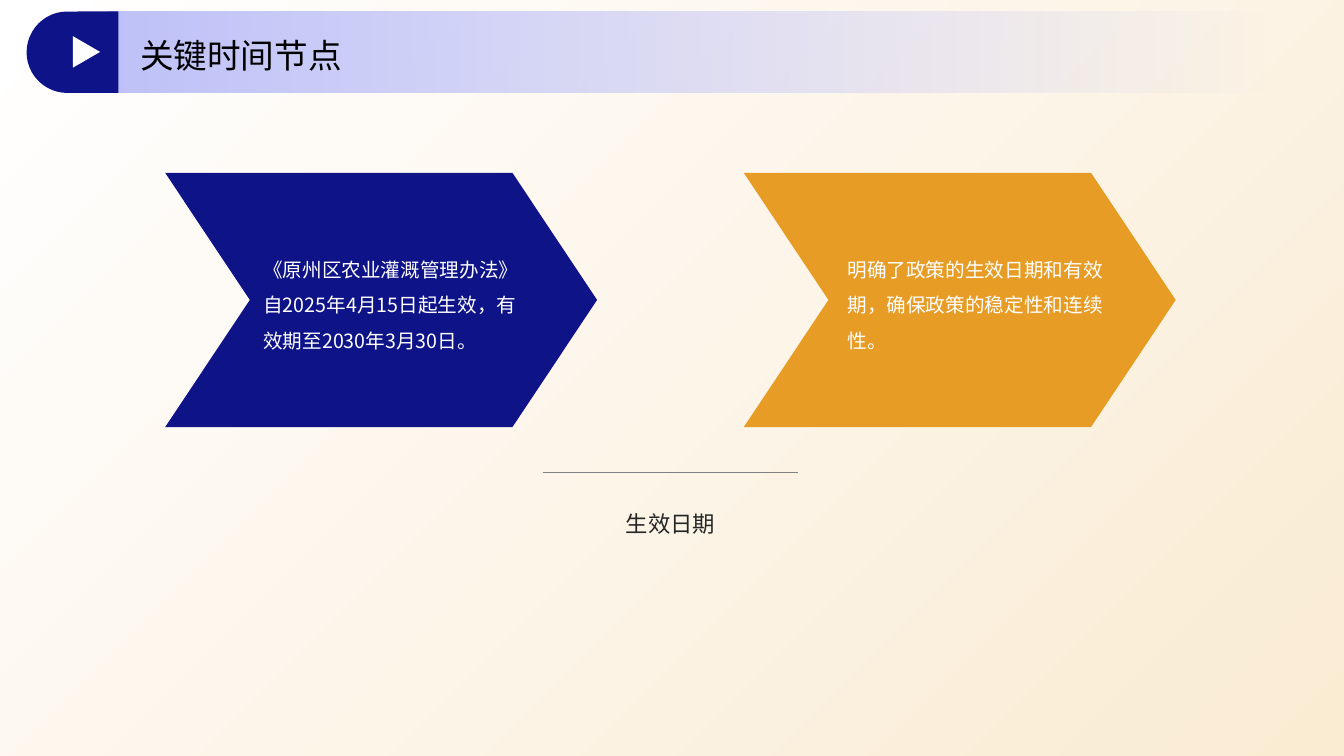
from lxml import etree
from pptx import Presentation
from pptx import util as u
from pptx.dml.color import RGBColor
from pptx.enum import shapes, text
from pptx.oxml import ns

FONT = "Noto Sans CJK SC"
NAVY = RGBColor(0x0E, 0x14, 0x88)
AMBER = RGBColor(0xE7, 0x9C, 0x25)
LILAC = RGBColor(0xBE, 0xC1, 0xF8)
CREAM = RGBColor(0xFA, 0xEB, 0xD3)
WHITE = RGBColor(0xFF, 0xFF, 0xFF)
GREY = RGBColor(0x80, 0x80, 0x80)
CHARCOAL = RGBColor(0x26, 0x26, 0x26)
BLACK = RGBColor(0, 0, 0)
SHAPE = shapes.MSO_SHAPE
MIDDLE = text.MSO_ANCHOR.MIDDLE
LEFT, CENTER = text.PP_ALIGN.LEFT, text.PP_ALIGN.CENTER


def add_block(page, kind, box, color=None, rotation=0):
    """Add a borderless preset shape, filled when a colour is given."""
    block = page.shapes.add_shape(kind, *map(u.Pt, box))
    block.shadow.inherit = False
    block.line.fill.background()
    block.rotation = rotation
    if color is not None:
        block.fill.solid()
        block.fill.fore_color.rgb = color
    return block


def add_gradient(block, start, end, angle):
    """Fill a shape with a two-colour gradient, angle counter-clockwise."""
    block.fill.gradient()
    block.fill.gradient_angle = angle
    for stop, color in zip(block.fill.gradient_stops, (start, end)):
        stop.color.rgb = color


def add_text(page, box, words, size, color, spacing, anchor=MIDDLE, align=LEFT):
    """Add a wrapping text box without insets."""
    frame = page.shapes.add_textbox(*map(u.Pt, box)).text_frame
    frame.word_wrap = True
    frame.vertical_anchor = anchor
    frame.margin_left = frame.margin_right = frame.margin_top = frame.margin_bottom = 0
    frame.text = words
    para = frame.paragraphs[0]
    para.line_spacing = spacing
    para.alignment = align
    span = para.runs[0]
    span.font.size = u.Pt(size)
    span.font.name = FONT
    span.font.color.rgb = color
    etree.SubElement(span.font._element, ns.qn("a:ea"), typeface=FONT)


def add_background(page, width, height):
    """Cover the page with a diagonal white-to-cream gradient."""
    block = add_block(page, SHAPE.RECTANGLE, (0, 0, width, height))
    add_gradient(block, WHITE, CREAM, 315)


def add_title_bar(page, box, title):
    """Draw the fading title band with its round cap and play mark."""
    left, top, width, height = box
    band = add_block(page, SHAPE.ROUNDED_RECTANGLE, (left + 49, top, width - 49, height))
    add_gradient(band, LILAC, LILAC, 0)
    fade = band.element.xpath(".//a:gs[last()]/a:srgbClr")[0]
    etree.SubElement(fade, ns.qn("a:alpha"), val="0")
    add_text(page, (left + 81, top + 10.3, 613, 39), title, 24, BLACK, 1.1)
    cap_width = 65.5
    cap_box = (left + (cap_width - height) / 2, top + (height - cap_width) / 2, height, cap_width)
    cap = add_block(page, SHAPE.ROUND_2_SAME_RECTANGLE, cap_box, NAVY, 270)
    cap.adjustments[0] = 0.5
    cap.adjustments[1] = 0
    add_block(page, SHAPE.ISOSCELES_TRIANGLE, (left + 31.5, top + 19.2, 22.5, 19.4), WHITE, 90)


def add_arrow(page, box, color, words, inset, text_width):
    """Draw a chevron with its statement inside."""
    left, top, width, height = box
    chevron = add_block(page, SHAPE.CHEVRON, box, color)
    chevron.adjustments[0] = 0.333
    add_text(page, (left + inset, top + 20.5, text_width, height - 42), words, 14, WHITE, 1.5)


def add_caption(page, box, words):
    """Draw a short centred rule with a caption below it."""
    left, top, width, height = box
    center, half = left + width / 2, 91
    rule = page.shapes.add_connector(
        shapes.MSO_CONNECTOR.STRAIGHT,
        u.Pt(center - half), u.Pt(top), u.Pt(center + half), u.Pt(top))
    rule.line.color.rgb = GREY
    rule.line.width = u.Pt(0.5)
    etree.SubElement(rule.element.spPr, ns.qn("a:effectLst"))
    add_text(page, (left, top + 17.5, width, height - 17.5), words, 16, CHARCOAL, 1.5,
             text.MSO_ANCHOR.TOP, CENTER)


def main():
    """Build the key dates slide."""
    deck = Presentation()
    deck.slide_width, deck.slide_height = u.Pt(960), u.Pt(540)
    page = deck.slides.add_slide(deck.slide_layouts[6])
    add_background(page, 960, 540)

    arrows = (
        (NAVY, "《原州区农业灌溉管理办法》自2025年4月15日起生效，有效期至2030年3月30日。", 70, 191),
        (AMBER, "明确了政策的生效日期和有效期，确保政策的稳定性和连续性。", 74, 184),
    )
    for index, (color, words, inset, text_width) in enumerate(arrows):
        box = (118 + index * 413.3, 123.5, 308.5, 181.5)
        add_arrow(page, box, color, words, inset, text_width)

    add_caption(page, (118, 337.5, 722, 122.5), "生效日期")
    add_title_bar(page, (19, 8.2, 888.5, 58.2), "关键时间节点")
    deck.save("out.pptx")


if __name__ == "__main__":
    main()
